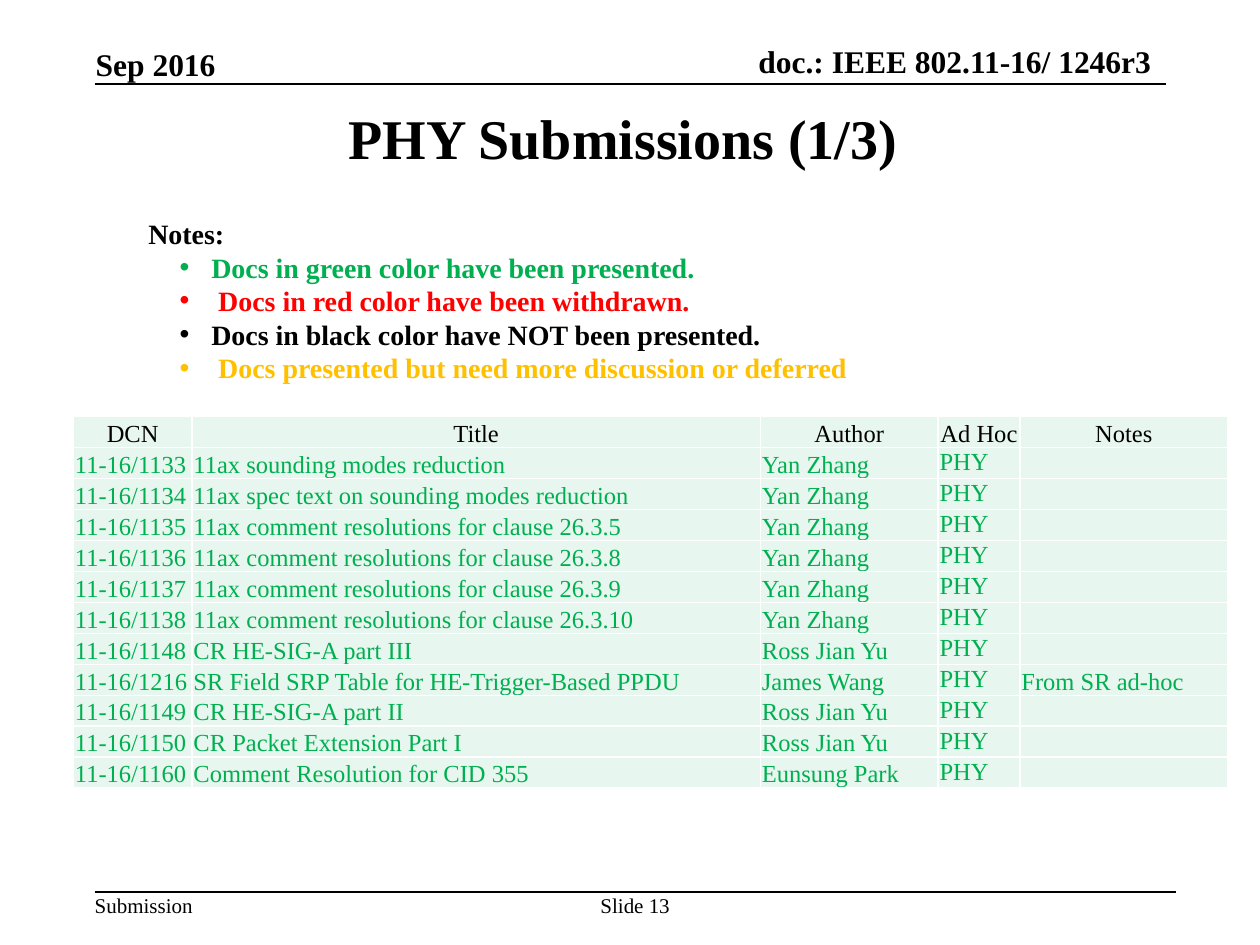
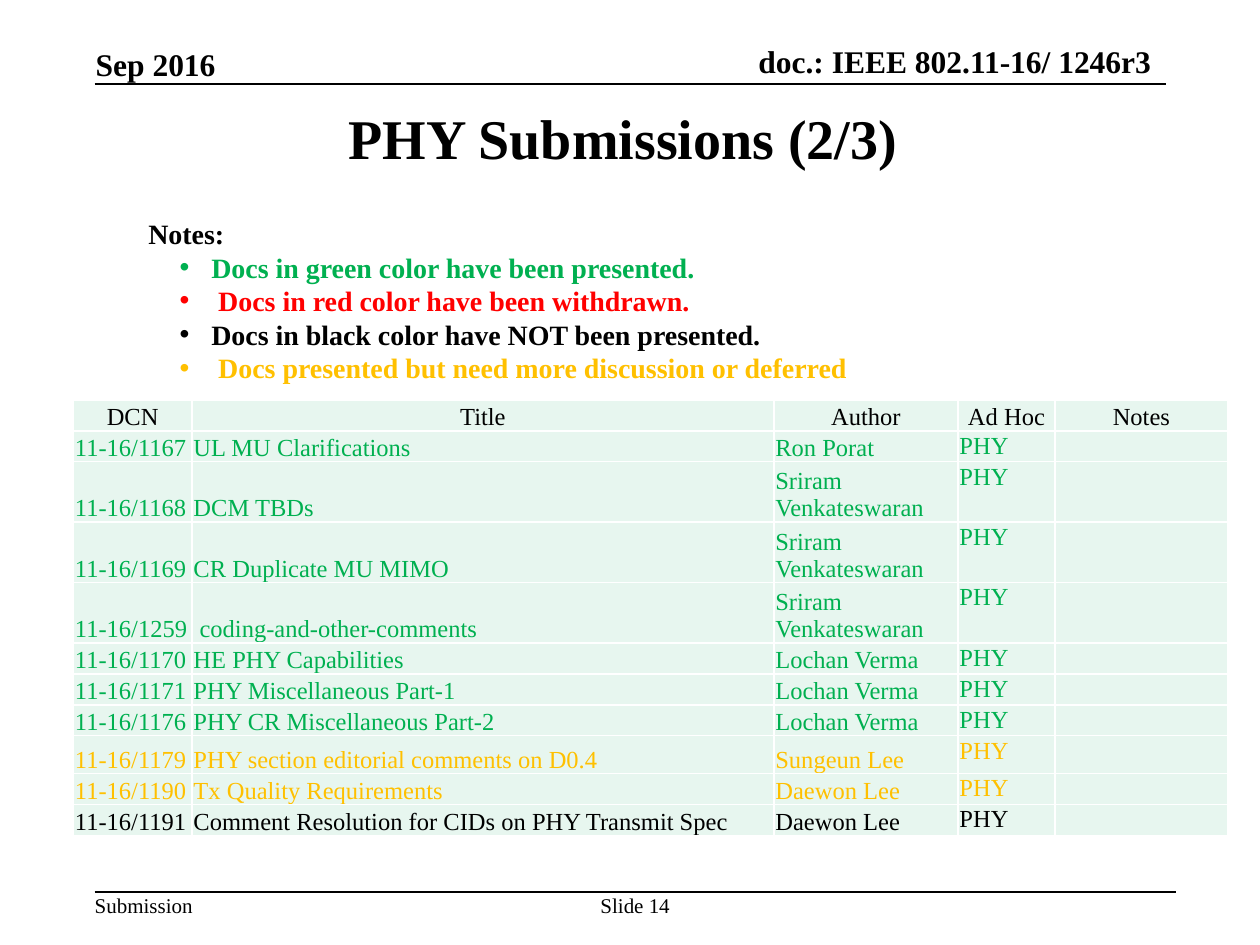
from dataclasses import dataclass

from lxml.etree import SubElement
from pptx import Presentation
from pptx.dml.color import RGBColor
from pptx.enum.shapes import MSO_CONNECTOR
from pptx.enum.text import MSO_ANCHOR as Anchor, PP_ALIGN as Align
from pptx.oxml import parse_xml
from pptx.oxml.ns import nsdecls, qn
from pptx.util import Cm, Pt

FONT = "Times New Roman"
BLACK, GREEN, RED, AMBER = "000000", "00B050", "FF0000", "FFC000"
WHITE, CELL_FILL = "FFFFFF", "E7F6EF"
HEADERS = ("DCN", "Title", "Author", "Ad Hoc", "Notes")
AD_HOC_COLUMN = 3
ROW_HEIGHT = 0.61


@dataclass(frozen=True)
class Label:
    text: str
    left: float
    top: float
    width: float
    height: float
    size: int
    bold: bool = False
    align: Align = Align.LEFT
    anchor: Anchor = Anchor.TOP


@dataclass(frozen=True)
class Rule:
    left: float
    right: float
    y: float


@dataclass(frozen=True)
class Doc:
    dcn: str
    title: str
    author: str
    notes: str = ""
    color: str = GREEN
    height: float = ROW_HEIGHT

    def values(self) -> tuple[str, ...]:
        return f"11-16/{self.dcn}", self.title, self.author, "PHY", self.notes


@dataclass(frozen=True)
class Page:
    title: str
    number: int
    table_top: float
    columns: tuple[float, ...]
    docs: tuple[Doc, ...]


FRAME_LABELS = (
    Label("doc.: IEEE 802.11-16/ 1246r3", 13.61, 0.84, 9.6, 0.76, 18, True, Align.RIGHT, Anchor.BOTTOM),
    Label("Sep 2016", 1.93, 0.91, 2.44, 0.76, 18, True, anchor=Anchor.BOTTOM),
    Label("Submission", 1.91, 17.99, 1.98, 0.51, 12),
)
FRAME_RULES = (Rule(1.91, 23.5, 1.69), Rule(1.91, 23.71, 17.99))

LEGEND = (
    ("Notes:", BLACK),
    ("Docs in green color have been presented.", GREEN),
    (" Docs in red color have been withdrawn.", RED),
    ("Docs in black color have NOT been presented.", BLACK),
    (" Docs presented but need more discussion or deferred", AMBER),
)

PAGES = (
    Page("PHY Submissions (1/3) ", 13, 8.4, (2.39, 11.46, 3.58, 1.65, 4.19), (
        Doc("1133", "11ax sounding modes reduction", "Yan Zhang"),
        Doc("1134", "11ax spec text on sounding modes reduction", "Yan Zhang"),
        Doc("1135", "11ax comment resolutions for clause 26.3.5", "Yan Zhang"),
        Doc("1136", "11ax comment resolutions for clause 26.3.8", "Yan Zhang"),
        Doc("1137", "11ax comment resolutions for clause 26.3.9", "Yan Zhang"),
        Doc("1138", "11ax comment resolutions for clause 26.3.10", "Yan Zhang"),
        Doc("1148", "CR HE-SIG-A part III", "Ross Jian Yu"),
        Doc("1216", "SR Field SRP Table for HE-Trigger-Based PPDU", "James Wang", "From SR ad-hoc"),
        Doc("1149", "CR HE-SIG-A part II", "Ross Jian Yu"),
        Doc("1150", "CR Packet Extension Part I", "Ross Jian Yu"),
        Doc("1160", "Comment Resolution for CID 355", "Eunsung Park"),
    )),
    Page("PHY Submissions (2/3) ", 14, 8.06, (2.39, 11.73, 3.71, 1.96, 3.48), (
        Doc("1167", "UL MU Clarifications", "Ron Porat"),
        Doc("1168", "DCM TBDs", "Sriram Venkateswaran", height=1.2),
        Doc("1169", "CR Duplicate MU MIMO", "Sriram Venkateswaran", height=1.2),
        Doc("1259", " coding-and-other-comments", "Sriram Venkateswaran", height=1.2),
        Doc("1170", "HE PHY Capabilities", "Lochan Verma"),
        Doc("1171", "PHY Miscellaneous Part-1", "Lochan Verma"),
        Doc("1176", "PHY CR Miscellaneous Part-2", "Lochan Verma"),
        Doc("1179", "PHY section editorial comments on D0.4", "Sungeun Lee", color=AMBER, height=0.76),
        Doc("1190", "Tx Quality Requirements", "Daewon Lee", color=AMBER),
        Doc("1191", "Comment Resolution for CIDs on PHY Transmit Spec", "Daewon Lee", color=BLACK),
    )),
)


def rgb(color: str) -> RGBColor:
    return RGBColor.from_string(color)


def style_runs(p, size: int, color: str = BLACK, bold: bool = False) -> None:
    for r in p.runs:
        r.font.name = FONT
        r.font.size = Pt(size)
        r.font.bold = bold
        r.font.color.rgb = rgb(color)


def add_label(s, label: Label) -> None:
    sp = s.shapes.add_textbox(Cm(label.left), Cm(label.top), Cm(label.width), Cm(label.height))
    tf = sp.text_frame
    tf.word_wrap = False
    tf.margin_left = tf.margin_right = tf.margin_top = tf.margin_bottom = 0
    tf.vertical_anchor = label.anchor
    tf.text = label.text
    p = tf.paragraphs[0]
    p.alignment = label.align
    style_runs(p, label.size, bold=label.bold)


def add_rule(s, rule: Rule) -> None:
    line = s.shapes.add_connector(
        MSO_CONNECTOR.STRAIGHT, Cm(rule.left), Cm(rule.y), Cm(rule.right), Cm(rule.y))
    line.line.color.rgb = rgb(BLACK)
    line.line.width = Pt(1)
    SubElement(line._element.spPr, qn("a:effectLst"))


def add_legend(s) -> None:
    sp = s.shapes.add_textbox(Cm(2.74), Cm(4.24), Cm(16.4), Cm(3.68))
    tf = sp.text_frame
    tf.word_wrap = True
    for i, (text, color) in enumerate(LEGEND):
        p = tf.add_paragraph() if i else tf.paragraphs[0]
        p.text = text
        p.line_spacing = Pt(19.2)
        style_runs(p, 16, color, bold=True)
        if i:
            pPr = p._p.get_or_add_pPr()
            pPr.set("marL", str(Cm(1.27)))
            pPr.set("indent", str(-Cm(0.64)))
            SubElement(pPr, qn("a:buFont"), typeface="Arial")
            SubElement(pPr, qn("a:buChar"), char="•")


def add_borders(cell) -> None:
    tcPr = cell._tc.get_or_add_tcPr()
    for i, side in enumerate(("lnL", "lnR", "lnT", "lnB")):
        tcPr.insert(i, parse_xml(
            f'<a:{side} {nsdecls("a")} w="{Pt(1)}"><a:solidFill>'
            f'<a:srgbClr val="{WHITE}"/></a:solidFill></a:{side}>'))


def fill_cell(cell, text: str, color: str, align: Align, anchor: Anchor) -> None:
    cell.fill.solid()
    cell.fill.fore_color.rgb = rgb(CELL_FILL)
    cell.margin_left = cell.margin_right = cell.margin_top = Cm(0.03)
    cell.margin_bottom = 0
    cell.vertical_anchor = anchor
    add_borders(cell)
    p = cell.text_frame.paragraphs[0]
    p.alignment = align
    if text:
        p.text = text
        style_runs(p, 14, color)
    else:
        SubElement(p._p, qn("a:endParaRPr"), sz="1400")


def add_doc_table(s, page: Page) -> None:
    heights = [ROW_HEIGHT] + [doc.height for doc in page.docs]
    table = s.shapes.add_table(
        len(heights), len(HEADERS), Cm(1.48), Cm(page.table_top),
        Cm(sum(page.columns)), Cm(sum(heights))).table
    table.first_row = table.horz_banding = False
    for column, width in zip(table.columns, page.columns):
        column.width = Cm(width)
    for row, height in zip(table.rows, heights):
        row.height = Cm(height)
    for j, header in enumerate(HEADERS):
        fill_cell(table.cell(0, j), header, BLACK, Align.CENTER, Anchor.BOTTOM)
    for i, doc in enumerate(page.docs, 1):
        for j, value in enumerate(doc.values()):
            anchor = Anchor.TOP if j == AD_HOC_COLUMN else Anchor.BOTTOM
            fill_cell(table.cell(i, j), value, doc.color, Align.LEFT, anchor)


def add_page(prs, page: Page) -> None:
    s = prs.slides.add_slide(prs.slide_layouts[6])
    for rule in FRAME_RULES:
        add_rule(s, rule)
    title = Label(page.title, 1.91, 1.27, 21.59, 2.97, 32, True, Align.CENTER, Anchor.MIDDLE)
    number = Label(f"Slide {page.number}", 12.07, 17.99, 1.47, 0.51, 12, align=Align.CENTER)
    for label in (*FRAME_LABELS, title, number):
        add_label(s, label)
    add_legend(s)
    add_doc_table(s, page)


def main() -> None:
    prs = Presentation()
    prs.slide_width, prs.slide_height = Cm(25.4), Cm(19.05)
    for page in PAGES:
        add_page(prs, page)
    prs.save("out.pptx")


if __name__ == "__main__":
    main()
